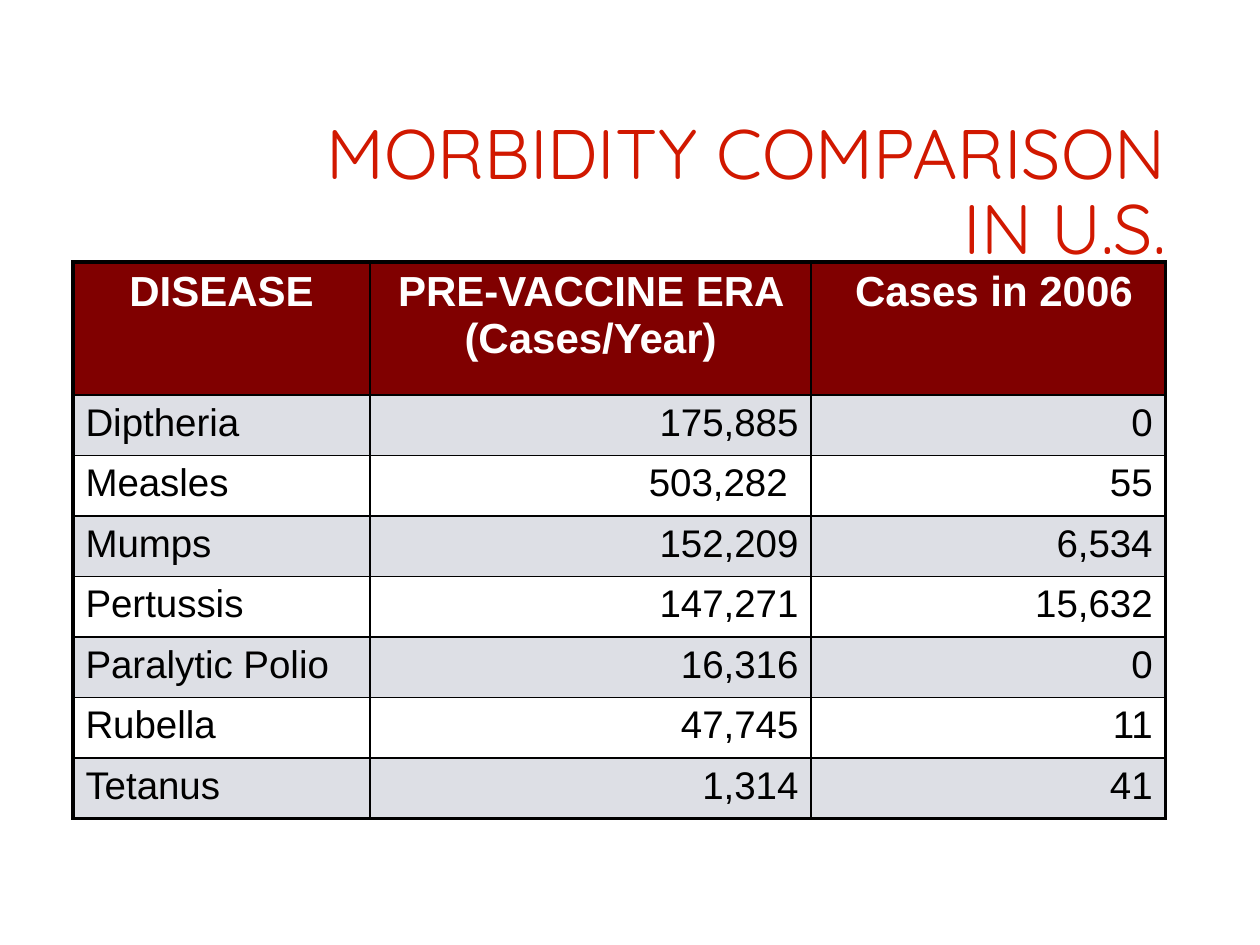
from lxml import etree
from pptx import Presentation
from pptx.dml.color import RGBColor
from pptx.enum import text
from pptx.oxml import ns
from pptx.util import Cm, Pt


def put(frame, words, font="Arial", size=22, color="000000", bold=False,
        align=text.PP_ALIGN.LEFT, space=None):
    par = frame.paragraphs[0]
    par.alignment = align
    par.line_spacing = space
    run = par.add_run()
    run.text = words
    run.font.name = font
    run.font.size = Pt(size)
    run.font.bold = bold
    run.font.color.rgb = RGBColor.from_string(color)


def edge(cell, side, width):
    props = cell._tc.get_or_add_tcPr()
    line = etree.SubElement(props, ns.qn("a:ln" + side), w=str(Pt(width)))
    fill = etree.SubElement(line, ns.qn("a:solidFill"))
    etree.SubElement(fill, ns.qn("a:srgbClr"), val="000000")


deck = Presentation()
deck.slide_width, deck.slide_height = Cm(25.4), Cm(19.05)
slide = deck.slides.add_slide(deck.slide_layouts[6])

# Title
box = slide.shapes.add_textbox(Cm(6.05), Cm(2.13), Cm(17.7), Cm(3.58))
frame = box.text_frame
frame.word_wrap = True
frame.vertical_anchor = text.MSO_ANCHOR.MIDDLE
put(frame, "MORBIDITY COMPARISON IN U.S.", font="Quicksand", size=40,
    color="D11800", align=text.PP_ALIGN.RIGHT, space=0.9)

# Table data
rows = [
    ("DISEASE", "PRE-VACCINE ERA (Cases/Year)", " Cases in 2006"),
    ("Diptheria", "175,885", "0"),
    ("Measles", "503,282 ", "55"),
    ("Mumps", "152,209", "6,534"),
    ("Pertussis", "147,271", "15,632"),
    ("Paralytic Polio", "16,316", "0"),
    ("Rubella", "47,745", "11"),
    ("Tetanus", "1,314", "41"),
]
wide = [5.99, 8.89, 7.14]
high = [2.68] + [1.22] * 7

# Table grid
table = slide.shapes.add_table(len(rows), len(wide), Cm(1.47), Cm(5.28),
                               Cm(sum(wide)), Cm(sum(high))).table
for col, width in zip(table.columns, wide):
    col.width = Cm(width)
for row, height in zip(table.rows, high):
    row.height = Cm(height)

# Cells: thick outer frame, thin inner lines, shaded odd rows
for r, row in enumerate(rows):
    for c, words in enumerate(row):
        cell = table.cell(r, c)
        outer = {"L": c == 0, "R": c == len(wide) - 1,
                 "T": r == 0, "B": r == len(rows) - 1}
        for side, thick in outer.items():
            edge(cell, side, 2.25 if thick else 1)
        if r == 0 or r % 2:
            cell.fill.solid()
            shade = "DDDFE5" if r else "800000"
            cell.fill.fore_color.rgb = RGBColor.from_string(shade)
        else:
            cell.fill.background()
        if r == 0:
            put(cell.text_frame, words, size=24, color="FFFFFF", bold=True,
                align=text.PP_ALIGN.CENTER)
        else:
            put(cell.text_frame, words,
                align=text.PP_ALIGN.RIGHT if c else text.PP_ALIGN.LEFT)

deck.save("out.pptx")
